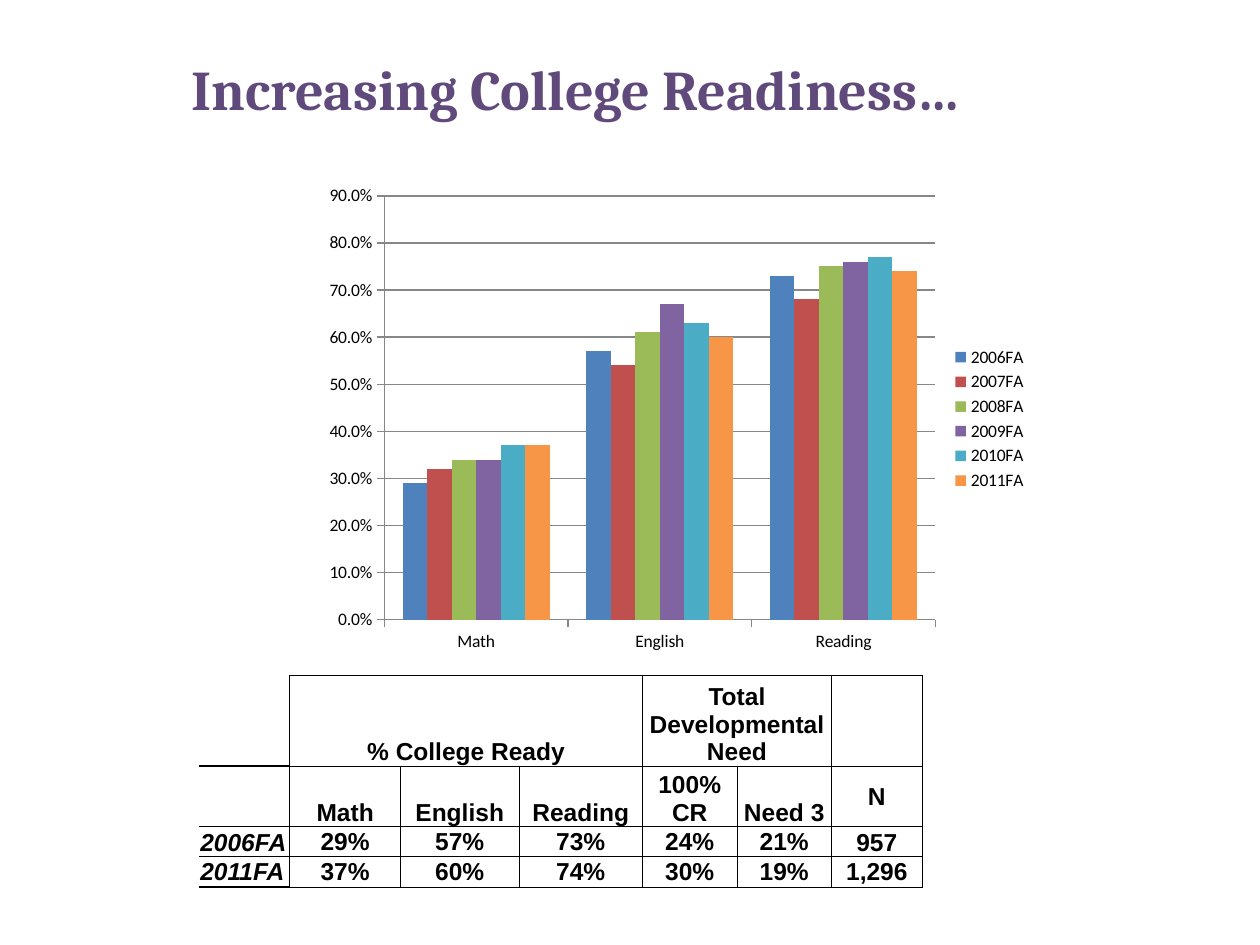
from lxml import etree
from pptx import Presentation
from pptx.chart.data import CategoryChartData
from pptx.dml.color import RGBColor
from pptx.enum.chart import XL_CHART_TYPE, XL_LEGEND_POSITION, XL_TICK_MARK
from pptx.enum.text import MSO_ANCHOR, MSO_AUTO_SIZE, PP_ALIGN
from pptx.oxml.ns import qn
from pptx.util import Inches, Pt

COLUMN = XL_CHART_TYPE.COLUMN_CLUSTERED
RIGHT = XL_LEGEND_POSITION.RIGHT
OUTSIDE = XL_TICK_MARK.OUTSIDE
TOP, MIDDLE, BOTTOM = MSO_ANCHOR.TOP, MSO_ANCHOR.MIDDLE, MSO_ANCHOR.BOTTOM
NO_FIT = MSO_AUTO_SIZE.NONE
LEFT, CENTER = PP_ALIGN.LEFT, PP_ALIGN.CENTER

COLORS = {"title": "604A7B", "text": "000000", "axis": "878787"}

SUBJECTS = ["Math", "English", "Reading"]
READINESS = [
    ("2006FA", "4F81BD", (0.29, 0.57, 0.73)),
    ("2007FA", "C0504D", (0.32, 0.54, 0.68)),
    ("2008FA", "9BBB59", (0.34, 0.61, 0.75)),
    ("2009FA", "8064A2", (0.34, 0.67, 0.76)),
    ("2010FA", "4BACC6", (0.37, 0.63, 0.77)),
    ("2011FA", "F79646", (0.37, 0.60, 0.74)),
]

COL_WIDTHS = [0.72, 0.88, 0.94, 0.98, 0.75, 0.75, 0.72]
ROW_HEIGHTS = [0.72, 0.48, 0.24, 0.24]
ROWS = [
    ["", "% College Ready", "", "", "Total Developmental Need", "", ""],
    ["", *SUBJECTS, "100% CR", "Need 3", "N"],
    ["2006FA", "29%", "57%", "73%", "24%", "21%", "957"],
    ["2011FA", "37%", "60%", "74%", "30%", "19%", "1,296"],
]
HEADER_SPANS = [(1, 3), (4, 5)]


def rgb(value):
    return RGBColor.from_string(COLORS.get(value, value))


class SlideBuilder:
    def __init__(self, prs):
        self.s = prs.slides.add_slide(prs.slide_layouts[5])

    def style_font(self, font, name, size, color="text", bold=False):
        font.name = name
        font.size = Pt(size)
        font.color.rgb = rgb(color)
        font.bold = bold

    def title(self, text, x, y, w, h):
        sp = self.s.shapes.title
        sp.left, sp.top, sp.width, sp.height = map(Inches, (x, y, w, h))
        tf = sp.text_frame
        tf.text = text
        tf.auto_size = NO_FIT
        tf.vertical_anchor = TOP
        p = tf.paragraphs[0]
        p.alignment = LEFT
        self.style_font(p.runs[0].font, "Cambria", 32, "title", True)

    def column_chart(self, x, y, w, h):
        data = CategoryChartData(number_format="0%")
        data.categories = SUBJECTS
        for term, _, values in READINESS:
            data.add_series(term, values)
        chart = self.s.shapes.add_chart(
            COLUMN, *map(Inches, (x, y, w, h)), data).chart
        self.style_font(chart.font, "Calibri", 10)
        chart.has_title = False
        chart.has_legend = True
        chart.legend.position = RIGHT
        chart.legend.include_in_layout = False

        plot = chart.plots[0]
        plot.gap_width = 150
        plot.overlap = 0
        plot.vary_by_categories = False
        for series, (_, color, _) in zip(plot.series, READINESS):
            series.format.fill.solid()
            series.format.fill.fore_color.rgb = rgb(color)

        values = chart.value_axis
        values.minimum_scale, values.maximum_scale = 0, 0.9
        values.major_unit = 0.1
        values.has_major_gridlines = True
        values.tick_labels.number_format = "#,##0.0%"
        values.tick_labels.number_format_is_linked = False
        chart.category_axis.major_tick_mark = OUTSIDE
        values.major_tick_mark = OUTSIDE
        for part in (values, chart.category_axis, values.major_gridlines):
            part.format.line.color.rgb = rgb("axis")
            part.format.line.width = Pt(0.75)

    def cell_borders(self, cell, widths):
        """Draw each side (L, R, T, B) at its width in points; 0 hides it."""
        tc_pr = cell._tc.get_or_add_tcPr()
        for side, width in widths.items():
            ln = etree.SubElement(tc_pr, qn(f"a:ln{side}"), w=str(Pt(width)))
            if width:
                fill = etree.SubElement(ln, qn("a:solidFill"))
                etree.SubElement(fill, qn("a:srgbClr"), val=COLORS["text"])
            else:
                etree.SubElement(ln, qn("a:noFill"))

    def cell(self, cell, text, anchor, align, italic):
        cell.fill.background()
        cell.vertical_anchor = anchor
        cell.margin_left = cell.margin_right = cell.margin_top = Inches(0.01)
        cell.margin_bottom = 0
        if text:
            p = cell.text_frame.paragraphs[0]
            p.text = text
            p.alignment = align
            font = p.runs[0].font
            self.style_font(font, "Arial", 14, bold=True)
            font.italic = italic

    def table(self, x, y):
        size = (sum(COL_WIDTHS), sum(ROW_HEIGHTS))
        table = self.s.shapes.add_table(
            len(ROWS), len(COL_WIDTHS), *map(Inches, (x, y, *size))).table
        table.first_row = table.horz_banding = False
        for column, width in zip(table.columns, COL_WIDTHS):
            column.width = Inches(width)
        for row, height in zip(table.rows, ROW_HEIGHTS):
            row.height = Inches(height)
        for first, last in HEADER_SPANS:
            table.cell(0, first).merge(table.cell(0, last))

        for i, texts in enumerate(ROWS):
            for j, text in enumerate(texts):
                cell = table.cell(i, j)
                is_label = j == 0
                self.cell_borders(cell, {
                    "L": 0 if is_label else 0.5,
                    "R": 0.5,
                    "T": 0 if is_label and i == 0 else 0.5,
                    "B": 1 if is_label and i != 2 else 0.5,
                })
                if is_label:
                    anchor = TOP if i == 3 else BOTTOM
                elif i > 1 or text == "N":
                    anchor = BOTTOM if text == "957" else MIDDLE
                else:
                    anchor = BOTTOM
                self.cell(cell, text, anchor,
                          LEFT if is_label else CENTER, is_label)


def main():
    prs = Presentation()
    prs.slide_width, prs.slide_height = Inches(10), Inches(7.5)
    slide = SlideBuilder(prs)
    slide.title("Increasing College Readiness…", 1.42, 0.38, 8, 0.64)
    slide.column_chart(2.5, 1.4, 5.75, 3.85)
    slide.table(1.58, 5.36)
    prs.save("out.pptx")


if __name__ == "__main__":
    main()
